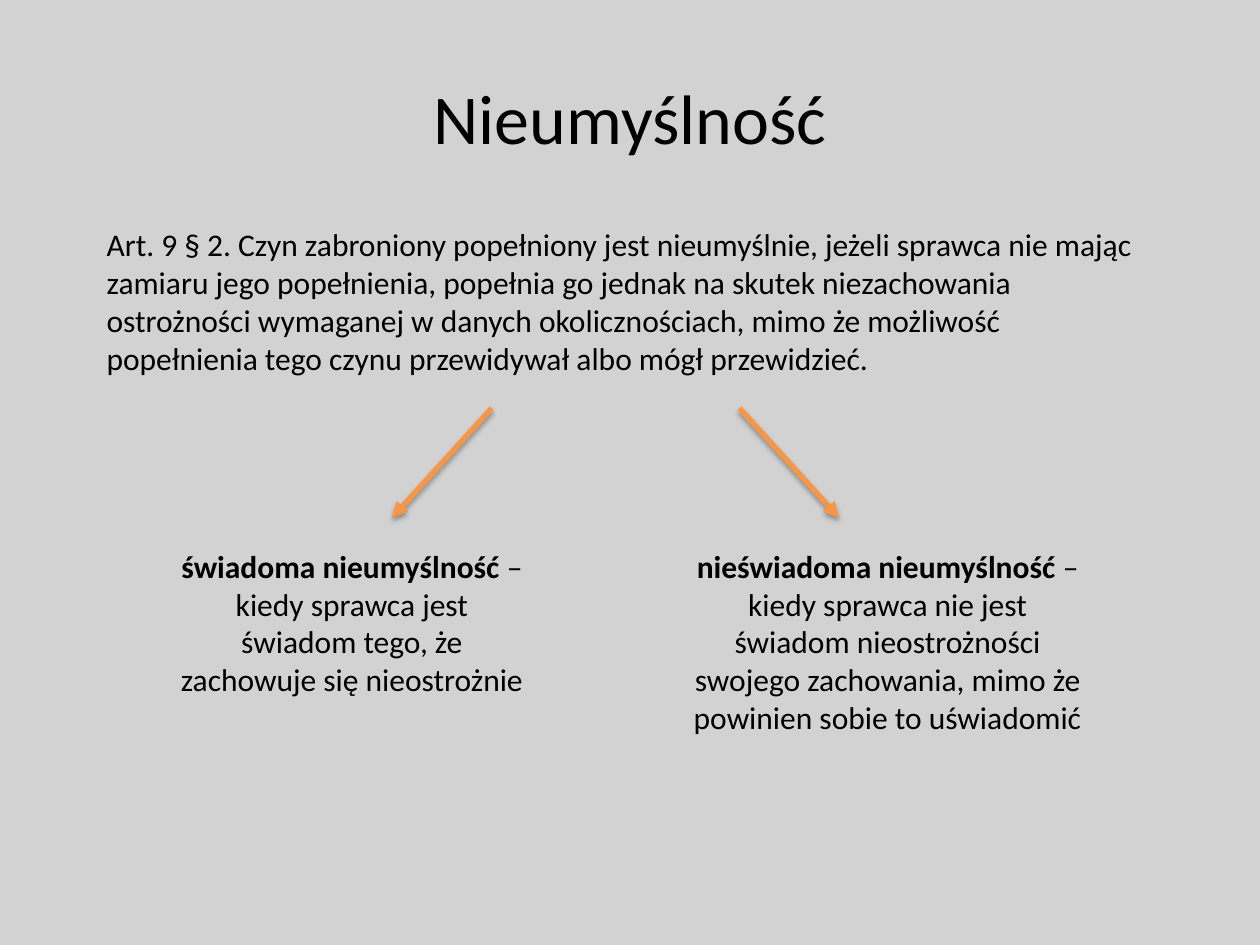
from dataclasses import dataclass

import lxml.etree
import pptx
import pptx.dml.color
import pptx.enum.shapes
import pptx.enum.text
import pptx.oxml
import pptx.oxml.ns
import pptx.util
from pptx.util import Cm


@dataclass(frozen=True)
class Theme:
    background: str = "D2D2D2"
    text: str = "000000"
    arrow: str = "F79646"
    font: str = "Calibri"
    title_size: int = 40
    body_size: int = 18
    arrow_width: int = 3


@dataclass(frozen=True)
class Box:
    left: float
    top: float
    width: float
    height: float


@dataclass(frozen=True)
class Branch:
    side: int
    term: str
    explanation: str
    box: Box


THEME = Theme()
ALIGN = pptx.enum.text.PP_ALIGN
ARROWS_CENTRE = 12.41
ARROW_START_OFFSET, ARROW_END_OFFSET = 2.5, 4.51
ARROW_TOP, ARROW_BOTTOM = 8.23, 10.44

TITLE_BOX = Box(1.27, 0.76, 22.86, 3.18)
ARTICLE_BOX = Box(1.9, 4.42, 21.41, 3.33)
ARTICLE = (
    "Art. 9 § 2. Czyn zabroniony popełniony jest nieumyślnie, jeżeli sprawca "
    "nie mając zamiaru jego popełnienia, popełnia go jednak na skutek "
    "niezachowania ostrożności wymaganej w danych okolicznościach, mimo że "
    "możliwość popełnienia tego czynu przewidywał albo mógł przewidzieć."
)
BRANCHES = (
    Branch(
        -1,
        "świadoma nieumyślność ",
        "– kiedy sprawca jest świadom tego, że zachowuje się nieostrożnie",
        Box(3.3, 10.9, 7.59, 3.33),
    ),
    Branch(
        1,
        "nieświadoma nieumyślność ",
        "– kiedy sprawca nie jest świadom nieostrożności swojego zachowania, "
        "mimo że powinien sobie to uświadomić",
        Box(13.69, 10.9, 8.41, 4.11),
    ),
)


def colour(value: str) -> pptx.dml.color.RGBColor:
    return pptx.dml.color.RGBColor.from_string(value)


def add_run(paragraph, text: str, size: int, bold: bool = False) -> None:
    run = paragraph.add_run()
    run.text = text
    run.font.name = THEME.font
    run.font.size = pptx.util.Pt(size)
    run.font.bold = bold
    run.font.color.rgb = colour(THEME.text)


def set_title(slide, text: str, box: Box) -> None:
    title = slide.shapes.title
    title.left, title.top = Cm(box.left), Cm(box.top)
    title.width, title.height = Cm(box.width), Cm(box.height)
    title.text_frame.vertical_anchor = pptx.enum.text.MSO_ANCHOR.MIDDLE
    paragraph = title.text_frame.paragraphs[0]
    paragraph.alignment = ALIGN.CENTER
    add_run(paragraph, text, THEME.title_size)


def add_text(slide, box: Box, runs: list[tuple[str, bool]], alignment: ALIGN) -> None:
    """Add a wrapped one-paragraph box from (text, bold) runs."""
    shape = slide.shapes.add_textbox(
        Cm(box.left), Cm(box.top), Cm(box.width), Cm(box.height)
    )
    frame = shape.text_frame
    frame.word_wrap = True
    frame.auto_size = pptx.enum.text.MSO_AUTO_SIZE.SHAPE_TO_FIT_TEXT
    paragraph = frame.paragraphs[0]
    paragraph.alignment = alignment
    for text, bold in runs:
        add_run(paragraph, text, THEME.body_size, bold)


def add_arrow(slide, side: int) -> None:
    """Draw a shadowed arrow that leans left (-1) or right (1)."""
    connector = slide.shapes.add_connector(
        pptx.enum.shapes.MSO_CONNECTOR.STRAIGHT,
        Cm(ARROWS_CENTRE + side * ARROW_START_OFFSET),
        Cm(ARROW_TOP),
        Cm(ARROWS_CENTRE + side * ARROW_END_OFFSET),
        Cm(ARROW_BOTTOM),
    )
    connector.line.color.rgb = colour(THEME.arrow)
    connector.line.width = pptx.util.Pt(THEME.arrow_width)
    qn = pptx.oxml.ns.qn
    properties = connector.element.spPr
    line = properties.find(qn("a:ln"))
    lxml.etree.SubElement(line, qn("a:tailEnd"), type="triangle")
    properties.append(pptx.oxml.parse_xml(
        f'<a:effectLst {pptx.oxml.ns.nsdecls("a")}>'
        '<a:outerShdw blurRad="40000" dist="23000" dir="5400000" rotWithShape="0">'
        '<a:srgbClr val="000000"><a:alpha val="35000"/></a:srgbClr>'
        "</a:outerShdw></a:effectLst>"
    ))


def main() -> None:
    presentation = pptx.Presentation()
    presentation.slide_width, presentation.slide_height = Cm(25.4), Cm(19.05)
    slide = presentation.slides.add_slide(
        presentation.slide_layouts.get_by_name("Title Only")
    )
    background = slide.background.fill
    background.solid()
    background.fore_color.rgb = colour(THEME.background)

    set_title(slide, "Nieumyślność", TITLE_BOX)
    add_text(slide, ARTICLE_BOX, [(ARTICLE, False)], ALIGN.LEFT)
    for branch in BRANCHES:
        add_arrow(slide, branch.side)
    for branch in BRANCHES:
        runs = [(branch.term, True), (branch.explanation, False)]
        add_text(slide, branch.box, runs, ALIGN.CENTER)
    presentation.save("out.pptx")


if __name__ == "__main__":
    main()
